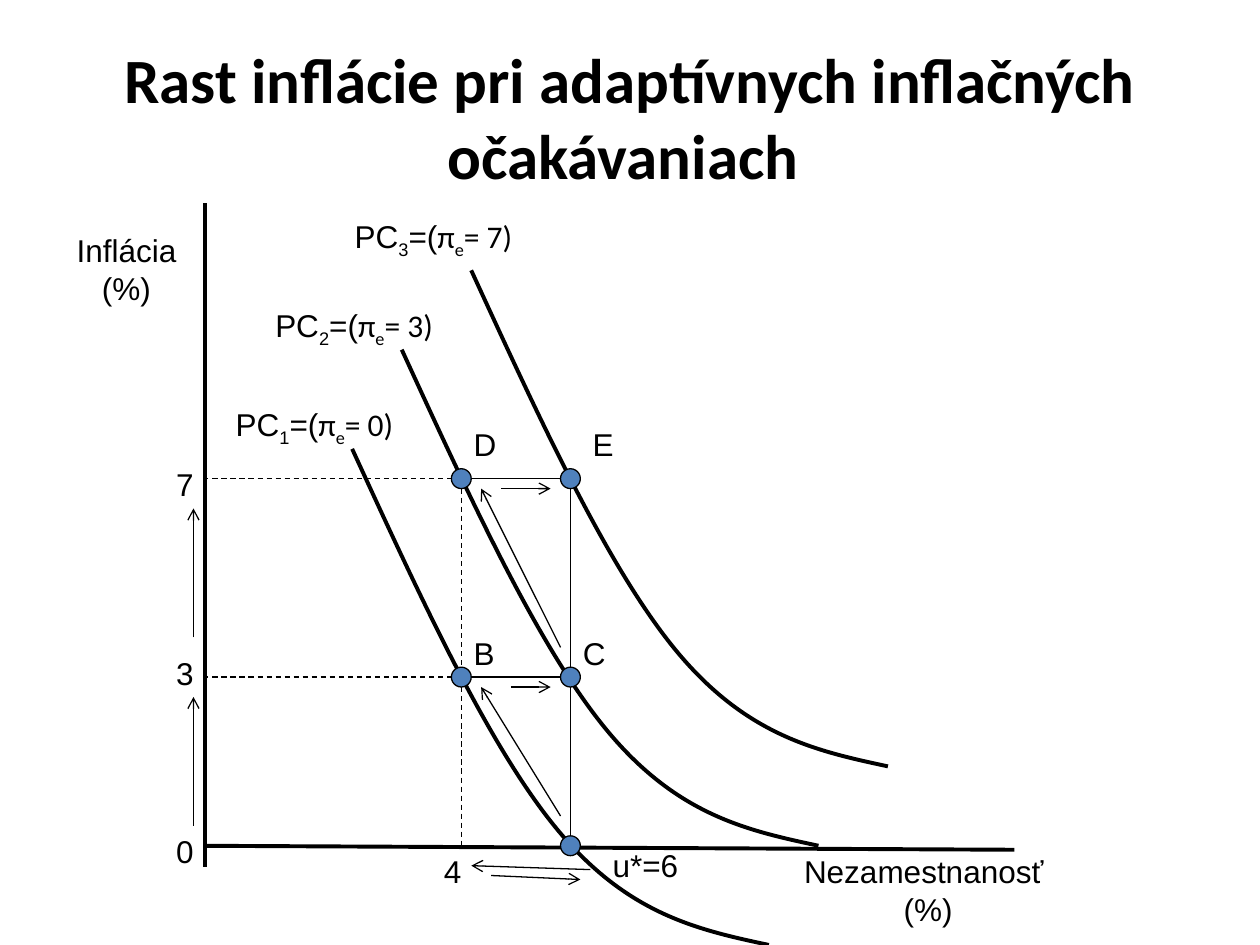
from dataclasses import dataclass

from lxml import etree
from pptx import Presentation
from pptx import util as u
from pptx.dml.color import RGBColor
from pptx.enum import dml, shapes, text
from pptx.oxml.ns import qn


@dataclass(frozen=True)
class Theme:
    ink: RGBColor = RGBColor(0, 0, 0)
    dot: RGBColor = RGBColor(0x4F, 0x81, 0xBD)
    title_font: str = "Calibri"
    label_font: str = "Arial"
    title_size: int = 36
    label_size: int = 18
    thin: float = 0.75
    thick: float = 2.25


@dataclass(frozen=True)
class Segment:
    """A straight line, in cm."""
    x1: float
    y1: float
    x2: float
    y2: float
    thick: bool = False
    dashed: bool = False
    arrow: bool = False


@dataclass(frozen=True)
class Label:
    """A short text and its box, in cm."""
    words: str
    x: float
    y: float
    width: float
    wrap: bool = False
    centred: bool = False


@dataclass(frozen=True)
class PhillipsCurve:
    """A curve's start and its label's corner, in cm."""
    number: int
    expected: int
    x: float
    y: float
    label_x: float
    label_y: float


THEME = Theme()
LINE_HEIGHT = 1.02
DOT_SIZE = 0.4

# Positions of the unemployment rates and inflation rates
AXIS_X = 4.13
RATE_X = {4: 9.3, 6: 11.5}
INFLATION_Y = {0: 17.05, 3: 13.65, 7: 9.65}
EQUILIBRIA = [(6, 0), (4, 3), (6, 3), (4, 7), (6, 7)]

# Control points of two joined Bézier pieces, relative to the curve's start
CURVE_SHAPE = [(1.4, 3.05), (2.8, 6.1), (4.2, 7.75),
               (5.6, 9.4), (7, 9.7), (8.4, 10)]

CURVES = [
    PhillipsCurve(3, 7, 9.5, 5.45, 6.9, 4.25),
    PhillipsCurve(2, 3, 8.1, 7.05, 5.3, 6.05),
    PhillipsCurve(1, 0, 7.1, 9.05, 4.5, 8.05),
]

AXES = [
    Segment(AXIS_X, 4.1, AXIS_X, 17.47, thick=True),
    Segment(4.1, INFLATION_Y[0], 20.45, 17.13, thick=True),
]

GUIDES = [
    Segment(RATE_X[4], 9.85, RATE_X[4], INFLATION_Y[0], dashed=True),
    Segment(RATE_X[6], 9.85, RATE_X[6], INFLATION_Y[0]),
]
for rate, dash_end in ((3, 9.2), (7, 9.3)):
    level = INFLATION_Y[rate]
    GUIDES += [Segment(4.1, level, dash_end, level, dashed=True),
               Segment(9.5, level, 11.3, level)]

ARROWS = [Segment(*ends, arrow=True) for ends in [
    (11.3, 16.45, 9.7, 13.85),   # up the first curve
    (10.3, 13.85, 11.1, 13.85),  # B to C
    (11.3, 13.05, 9.7, 9.85),    # up the second curve
    (10.1, 9.85, 11.1, 9.85),    # D to E
    (3.9, 16.65, 3.9, 14.05),    # inflation 0 to 3
    (3.9, 12.85, 3.9, 10.25),    # inflation 3 to 7
    (11.9, 17.53, 9.5, 17.45),   # unemployment 6 to 4
    (9.9, 17.65, 11.7, 17.73),   # unemployment 4 to 6
]]

LABELS = [
    Label("Inflácia\n(%)", 1.25, 4.53, 2.6, centred=True),
    Label("Nezamestnanosť \n(%)", 15.7, 17.05, 6.02, wrap=True, centred=True),
    Label("4", 8.7, 17.05, 1.3, wrap=True),
    Label("u*=6", 12.1, 16.93, 2.4, wrap=True),
    Label("0", 3.3, 16.65, 0.8, wrap=True),
    Label("3", 3.3, 13.05, 0.8, wrap=True),
    Label("7", 3.3, 9.25, 0.8, wrap=True),
    Label("B", 9.3, 12.65, 0.95),
    Label("C", 11.5, 12.65, 0.97),
    Label("D", 9.3, 8.45, 0.97),
    Label("E", 11.7, 8.45, 0.95),
]


def add_run(paragraph, words: str, *, font: str = THEME.label_font,
            size: int = THEME.label_size, bold: bool = False,
            subscript: bool = False) -> None:
    run = paragraph.add_run()
    run.text = words
    run.font.name, run.font.size, run.font.bold = font, u.Pt(size), bold
    run.font.color.rgb = THEME.ink
    if subscript:
        run._r.get_or_add_rPr().set("baseline", "-25000")


def add_label(slide, label: Label):
    """Draw a label and return its last paragraph."""
    lines = label.words.split("\n")
    box = slide.shapes.add_textbox(u.Cm(label.x), u.Cm(label.y), u.Cm(label.width),
                                   u.Cm(LINE_HEIGHT if len(lines) == 1 else 1.78))
    frame = box.text_frame
    frame.word_wrap = label.wrap
    frame.auto_size = text.MSO_AUTO_SIZE.SHAPE_TO_FIT_TEXT
    for index, words in enumerate(lines):
        paragraph = frame.add_paragraph() if index else frame.paragraphs[0]
        if label.centred:
            paragraph.alignment = text.PP_ALIGN.CENTER
        if words:
            add_run(paragraph, words)
    return paragraph


def add_segment(slide, segment: Segment) -> None:
    line = slide.shapes.add_connector(
        shapes.MSO_CONNECTOR.STRAIGHT, u.Cm(segment.x1), u.Cm(segment.y1),
        u.Cm(segment.x2), u.Cm(segment.y2))
    line.line.color.rgb = THEME.ink
    line.line.width = u.Pt(THEME.thick if segment.thick else THEME.thin)
    if segment.dashed:
        line.line.dash_style = dml.MSO_LINE.DASH
    properties = line._element.spPr
    if segment.arrow:
        etree.SubElement(properties.find(qn("a:ln")), qn("a:tailEnd"), type="arrow")
    etree.SubElement(properties, qn("a:effectLst"))


def add_curve(slide, curve: PhillipsCurve) -> None:
    builder = slide.shapes.build_freeform(u.Cm(curve.x), u.Cm(curve.y))
    builder.add_line_segments(
        [(u.Cm(curve.x + dx), u.Cm(curve.y + dy)) for dx, dy in CURVE_SHAPE], close=False)
    outline = builder.convert_to_shape()
    # Turn each three straight steps into one Bézier piece
    steps = list(outline._element.iter(qn("a:lnTo")))
    route = steps[0].getparent()
    for first in range(0, len(steps), 3):
        piece = etree.SubElement(route, qn("a:cubicBezTo"))
        for step in steps[first:first + 3]:
            piece.append(step[0])
            route.remove(step)
    outline.shadow.inherit = False
    outline.fill.background()
    outline.line.color.rgb = THEME.ink
    outline.line.width = u.Pt(THEME.thick)


def add_curve_label(slide, curve: PhillipsCurve) -> None:
    paragraph = add_label(slide, Label("", curve.label_x, curve.label_y, 3.76))
    add_run(paragraph, "PC")
    add_run(paragraph, str(curve.number), subscript=True)
    add_run(paragraph, "=(")
    add_run(paragraph, "π", font=THEME.title_font)
    add_run(paragraph, "e", font=THEME.title_font, subscript=True)
    add_run(paragraph, f"= {curve.expected})", font=THEME.title_font)


def add_dot(slide, unemployment: int, inflation: int) -> None:
    dot = slide.shapes.add_shape(
        shapes.MSO_SHAPE.OVAL, u.Cm(RATE_X[unemployment] - DOT_SIZE / 2),
        u.Cm(INFLATION_Y[inflation] - DOT_SIZE / 2), u.Cm(DOT_SIZE), u.Cm(DOT_SIZE))
    dot.shadow.inherit = False
    dot.fill.solid()
    dot.fill.fore_color.rgb = THEME.dot
    dot.line.color.rgb = THEME.ink
    dot.line.width = u.Pt(THEME.thin)


def add_title(slide, words: str) -> None:
    title = slide.shapes.title
    title.left, title.top, title.width, title.height = map(u.Cm, (1.27, 0.76, 22.86, 3.18))
    title.text_frame.vertical_anchor = text.MSO_ANCHOR.MIDDLE
    paragraph = title.text_frame.paragraphs[0]
    paragraph.alignment = text.PP_ALIGN.CENTER
    add_run(paragraph, words, font=THEME.title_font, size=THEME.title_size, bold=True)


def main() -> None:
    deck = Presentation()
    deck.slide_width, deck.slide_height = u.Cm(25.4), u.Cm(19.05)
    slide = deck.slides.add_slide(deck.slide_layouts[5])
    add_title(slide, "Rast inflácie pri adaptívnych inflačných očakávaniach ")
    # Diagram lines, then the equilibrium points over them
    for curve in CURVES:
        add_curve(slide, curve)
    for segment in AXES + GUIDES + ARROWS:
        add_segment(slide, segment)
    for unemployment, inflation in EQUILIBRIA:
        add_dot(slide, unemployment, inflation)
    # Wording
    for curve in CURVES:
        add_curve_label(slide, curve)
    for label in LABELS:
        add_label(slide, label)
    deck.save("out.pptx")


if __name__ == "__main__":
    main()
